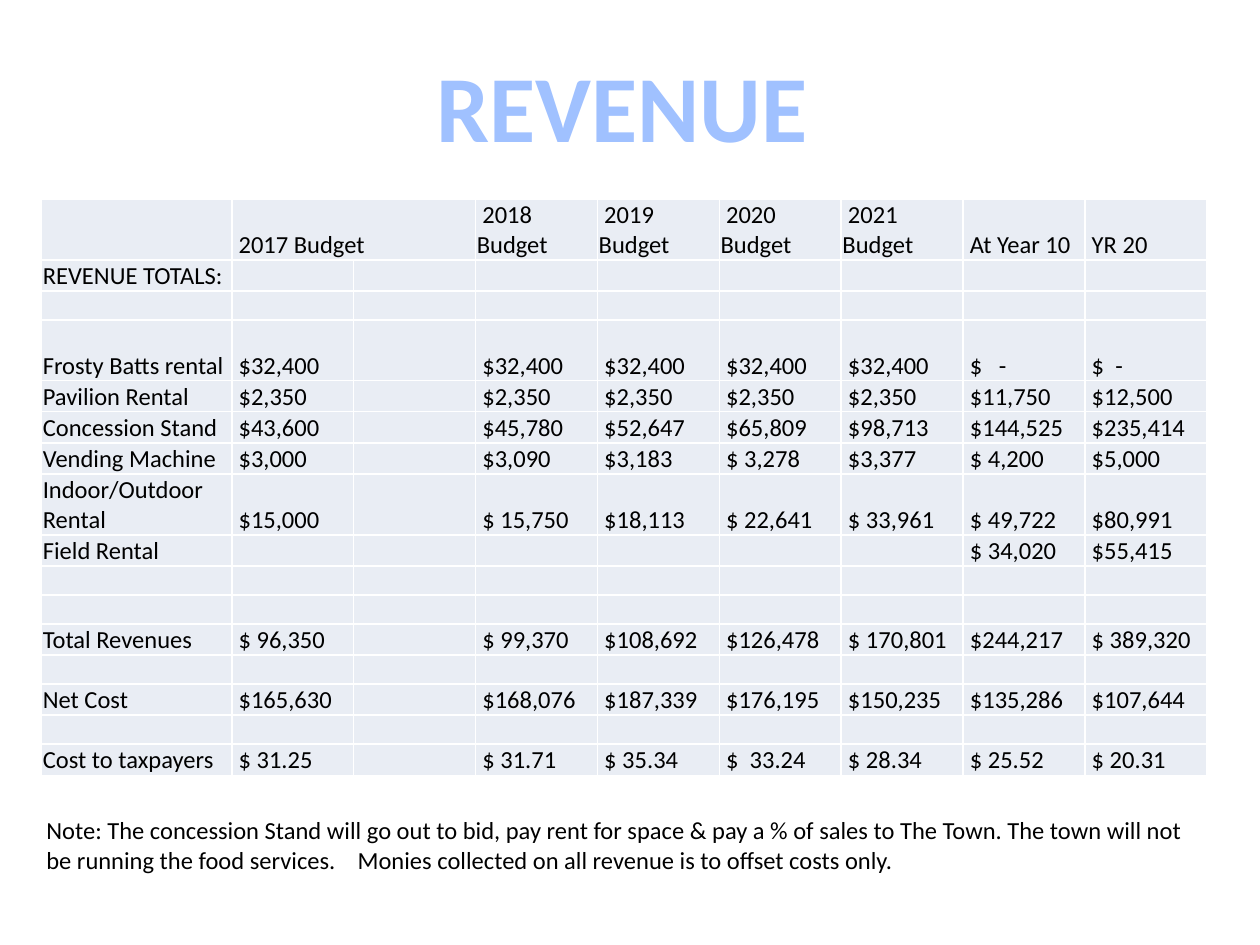
from dataclasses import dataclass

from lxml.etree import SubElement
from pptx import Presentation
from pptx.dml.color import RGBColor
from pptx.enum.text import MSO_ANCHOR as Anchor, PP_ALIGN as Align
from pptx.oxml import parse_xml
from pptx.oxml.ns import nsdecls, qn
from pptx.util import Inches, Pt

BLACK = RGBColor(0x00, 0x00, 0x00)
WHITE = RGBColor(0xFF, 0xFF, 0xFF)
TITLE_BLUE = RGBColor(0xA0, 0xC1, 0xFF)
CELL_FILL = RGBColor(0xE9, 0xED, 0xF4)
FONT = "Calibri"
SLIDE_W, SLIDE_H = 10, 7.5

# Table grid, in inches
TABLE_LEFT, TABLE_TOP, TABLE_W = 0.33, 1.58, 9.25
LABEL_W = 1.51
LINE_H, EMPTY_H = 0.24, 0.23


@dataclass
class Row:
    label: str = ""
    values: tuple[str, ...] = ()  # one per year column, first to last
    lines: int = 1

    @property
    def height(self) -> float:
        return self.lines * LINE_H if self.label or self.values else EMPTY_H

    @property
    def cells(self) -> list[str]:
        """Label, first year, spare column, then the other years."""
        values = [f" {v}" if v else "" for v in self.values or ("",) * 7]
        return [self.label, values[0], "", *values[1:]]


@dataclass
class Note:
    text: str
    left: float  # shares of the slide's size
    top: float
    width: float
    height: float
    size: int
    color: RGBColor
    bold: bool = False
    wrap: bool = True
    align: Align = Align.LEFT


ROWS = [
    Row("", ("2017 Budget", "2018 Budget", "2019 Budget", "2020 Budget",
             "2021 Budget", "At Year 10", "YR 20"), 2),
    Row("REVENUE TOTALS:"),
    Row(),
    Row("Frosty Batts rental", ("$32,400", "$32,400", "$32,400", "$32,400",
                                "$32,400", "$   -", "$  -"), 2),
    Row("Pavilion Rental", ("$2,350", "$2,350", "$2,350", "$2,350",
                            "$2,350", "$11,750", "$12,500")),
    Row("Concession Stand", ("$43,600", "$45,780", "$52,647", "$65,809",
                             "$98,713", "$144,525", "$235,414")),
    Row("Vending Machine", ("$3,000", "$3,090", "$3,183", "$ 3,278",
                            "$3,377", "$ 4,200", "$5,000")),
    Row("Indoor/Outdoor Rental", ("$15,000", "$ 15,750", "$18,113", "$ 22,641",
                                  "$ 33,961", "$ 49,722", "$80,991"), 2),
    Row("Field Rental", ("", "", "", "", "", "$ 34,020", "$55,415")),
    Row(),
    Row(),
    Row("Total Revenues", ("$ 96,350", "$ 99,370", "$108,692", "$126,478",
                           "$ 170,801", "$244,217", "$ 389,320")),
    Row(),
    Row("Net Cost", ("$165,630", "$168,076", "$187,339", "$176,195",
                     "$150,235", "$135,286", "$107,644")),
    Row(),
    Row("Cost to taxpayers", ("$ 31.25", "$ 31.71", "$ 35.34", "$  33.24",
                              "$ 28.34", "$ 25.52", "$ 20.31")),
]

NOTES = [
    Note("REVENUE", 0.335, 0.044, 0.318, 0.135, 54, TITLE_BLUE,
         bold=True, wrap=False, align=Align.CENTER),
    Note("Note: The concession Stand will go out to bid, pay rent for space & "
         "pay a % of sales to The Town. The town will not be running the food "
         "services.    Monies collected on all revenue is to offset costs only.",
         0.027, 0.856, 0.933, 0.076, 14, BLACK),
]


def style_run(r, size: int, color: RGBColor, bold: bool = False) -> None:
    r.font.name, r.font.size, r.font.bold = FONT, Pt(size), bold
    r.font.color.rgb = color


def add_borders(cell) -> None:
    """White one-point lines on all four sides, placed ahead of the fill."""
    tc_pr = cell._tc.get_or_add_tcPr()
    for i, side in enumerate(("lnL", "lnR", "lnT", "lnB")):
        tc_pr.insert(i, parse_xml(
            f'<a:{side} {nsdecls("a")} w="12700"><a:solidFill>'
            f'<a:srgbClr val="{WHITE}"/></a:solidFill></a:{side}>'))


def fill_cell(cell, text: str) -> None:
    cell.fill.solid()
    cell.fill.fore_color.rgb = CELL_FILL
    add_borders(cell)
    cell.vertical_anchor = Anchor.BOTTOM
    cell.margin_left = cell.margin_right = cell.margin_top = Inches(0.01)
    cell.margin_bottom = 0
    p = cell.text_frame.paragraphs[0]
    if text:
        p.text = text
        style_run(p.runs[0], 14, BLACK)
    else:  # keeps empty rows from growing
        SubElement(p._p, qn("a:endParaRPr"), sz="1300")


def add_revenue_table(s, rows: list[Row]) -> None:
    n_cols = len(rows[0].cells)
    table = s.shapes.add_table(
        len(rows), n_cols, Inches(TABLE_LEFT), Inches(TABLE_TOP),
        Inches(TABLE_W), Inches(sum(row.height for row in rows))).table
    table.first_row = table.horz_banding = False
    year_w = (TABLE_W - LABEL_W) / (n_cols - 1)
    for j, col in enumerate(table.columns):
        col.width = Inches(year_w if j else LABEL_W)
    for i, row in enumerate(rows):
        table.rows[i].height = Inches(row.height)
        for j, text in enumerate(row.cells):
            fill_cell(table.cell(i, j), text)
    # The first year's heading covers the spare column
    table.cell(0, 1).merge(table.cell(0, 2))


def add_note(s, note: Note) -> None:
    sp = s.shapes.add_textbox(
        Inches(note.left * SLIDE_W), Inches(note.top * SLIDE_H),
        Inches(note.width * SLIDE_W), Inches(note.height * SLIDE_H))
    tf = sp.text_frame
    tf.word_wrap = note.wrap
    p = tf.paragraphs[0]
    p.text = note.text
    p.alignment = note.align
    style_run(p.runs[0], note.size, note.color, note.bold)


def main() -> None:
    prs = Presentation()
    prs.slide_width, prs.slide_height = Inches(SLIDE_W), Inches(SLIDE_H)
    s = prs.slides.add_slide(prs.slide_layouts[6])
    add_revenue_table(s, ROWS)
    # Title and footnote
    for note in NOTES:
        add_note(s, note)
    prs.save("out.pptx")


if __name__ == "__main__":
    main()
